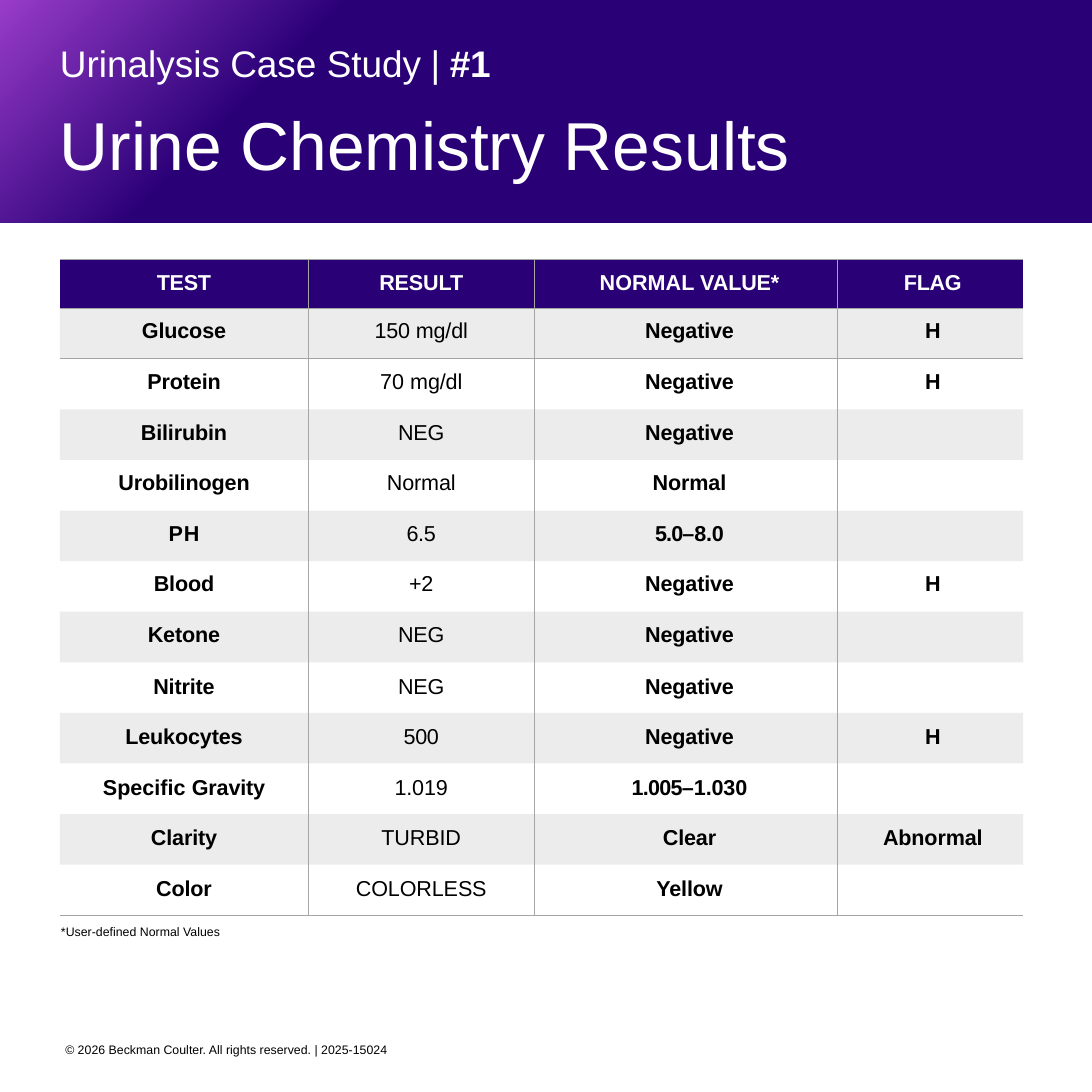
from dataclasses import dataclass

from lxml import etree
from pptx import Presentation
from pptx import util as u
from pptx.dml.color import RGBColor
from pptx.enum import shapes, text
from pptx.oxml.ns import qn

FONT = "Arial"
PURPLE = RGBColor(0x98, 0x3C, 0xC9)
INDIGO = RGBColor(0x29, 0x00, 0x76)
WHITE = RGBColor(0xFF, 0xFF, 0xFF)
BLACK = RGBColor(0, 0, 0)
RULE_GREY = RGBColor(0xA4, 0xA4, 0xA4)
DIVIDER_GREY = RGBColor(0xA6, 0xA6, 0xA6)

SIDE = 9.85
LEFT = 0.54
HEADER_HEIGHT = 0.44
TABLE_HEIGHT = 5.92


@dataclass
class Span:
    text: str
    tracking: float = -0.1
    bold: bool = False


@dataclass
class Column:
    width: float
    indent: float = 0
    bold: bool = True


@dataclass
class Label:
    left: float
    top: float
    width: float
    height: float
    size: float
    color: RGBColor
    spans: list[Span]
    margins: tuple[float, float, float, float] = (0, 0, 0, 0)
    anchor: text.MSO_ANCHOR = text.MSO_ANCHOR.TOP


COLUMNS = [Column(2.24), Column(2.04, bold=False), Column(2.73, 0.07), Column(1.68, 0.05)]

# A cell is a plain string, or a list of spans when its tracking varies
Cell = str | list[Span]
HIGH = [Span("H", 0.1)]
NEG = [Span("NEG", -0.2)]
ROWS: list[list[Cell]] = [
    [[Span("TEST", -0.2)], "RESULT", [Span("NORMAL ", 0), Span("VALUE*")], [Span("FLAG", -0.2)]],
    ["Glucose", [Span("150 ", -0.2), Span("mg/dl")], "Negative", HIGH],
    ["Protein", [Span("70 ", 0), Span("mg/dl")], "Negative", HIGH],
    ["Bilirubin", NEG, "Negative", ""],
    ["Urobilinogen", "Normal", "Normal", ""],
    [[Span("PH", 0.5)], [Span("6.5", -0.2)], [Span("5.0–", -0.6), Span("8.0", -0.2)], ""],
    ["Blood", [Span("+2", -0.2)], "Negative", HIGH],
    ["Ketone", NEG, "Negative", ""],
    ["Nitrite", NEG, "Negative", ""],
    ["Leukocytes", [Span("500", -0.2)], "Negative", HIGH],
    [[Span("Specific ", 0), Span("Gravity")], "1.019", [Span("1.005–", -0.5), Span("1.030")], ""],
    ["Clarity", "TURBID", "Clear", "Abnormal"],
    ["Color", "COLORLESS", "Yellow", ""],
]

LABELS = [
    Label(LEFT, 0.67, 8.7, 1.15, 44, WHITE, [Span("Urine Chemistry Results", 0)],
          (0, 0.1, 0, 0), text.MSO_ANCHOR.MIDDLE),
    Label(LEFT, 0.34, 8.7, 0.4, 24, WHITE,
          [Span("Urinalysis Case Study", 0), Span(" | ", -0.5), Span("#1", -0.2, True)],
          (0, 0.03, 0, 0)),
    Label(LEFT + 0.01, 8.34, 2.58, 0.14, 8, BLACK, [Span("*User-defined Normal Values", 0)]),
    Label(0.49, 9.35, 5.21, 0.24, 8, BLACK,
          [Span("© 2026 Beckman Coulter. All rights reserved. | 2025-15024", 0)],
          (0.1, 0.05, 0.1, 0.05)),
]


def add_span(para, span: Span, size: float, color: RGBColor, bold: bool) -> None:
    run = para.add_run()
    run.text = span.text
    run.font.name = FONT
    run.font.size = u.Pt(size)
    run.font.bold = bold
    run.font.color.rgb = color
    if span.tracking:
        run.font._element.set("spc", str(round(span.tracking * 100)))


def set_margins(target, margins: tuple[float, float, float, float]) -> None:
    left, top, right, bottom = (u.Inches(value) for value in margins)
    target.margin_left, target.margin_top = left, top
    target.margin_right, target.margin_bottom = right, bottom


def add_label(page, label: Label) -> None:
    box = page.shapes.add_textbox(u.Inches(label.left), u.Inches(label.top),
                                  u.Inches(label.width), u.Inches(label.height))
    frame = box.text_frame
    frame.word_wrap = True
    frame.vertical_anchor = label.anchor
    set_margins(frame, label.margins)
    for span in label.spans:
        add_span(frame.paragraphs[0], span, label.size, label.color, span.bold)


def add_band(page) -> None:
    band = page.shapes.add_shape(shapes.MSO_SHAPE.RECTANGLE, 0, 0, u.Inches(SIDE), u.Inches(2.01))
    band.shadow.inherit = False
    band.line.fill.background()
    band.fill.gradient()
    band.fill.gradient_angle = 315
    for stop, color, position in zip(band.fill.gradient_stops, (PURPLE, INDIGO), (0, 0.27)):
        stop.color.rgb = color
        stop.position = position


def fill_cell(cell, row: int) -> None:
    if row > 0 and row % 2 == 0:
        cell.fill.background()
        return
    cell.fill.solid()
    cell.fill.fore_color.rgb = RULE_GREY if row else INDIGO
    if row:
        color = cell._tc.tcPr.find(".//" + qn("a:srgbClr"))
        etree.SubElement(color, qn("a:alpha")).set("val", "20000")


def set_borders(cell, row: int, column: int) -> None:
    divider, rule = (DIVIDER_GREY, 0.5), (RULE_GREY, 1)
    edges = {
        "a:lnL": divider if column > 0 else None,
        "a:lnR": divider if column < len(COLUMNS) - 1 else None,
        "a:lnT": rule if row <= 2 else None,
        "a:lnB": rule if row <= 1 or row == len(ROWS) - 1 else None,
    }
    properties = cell._tc.get_or_add_tcPr()
    for index, (tag, edge) in enumerate(edges.items()):
        line = etree.Element(qn(tag))
        if edge:
            color, width = edge
            line.set("w", str(u.Pt(width)))
            solid = etree.SubElement(line, qn("a:solidFill"))
            etree.SubElement(solid, qn("a:srgbClr")).set("val", str(color))
        else:
            etree.SubElement(line, qn("a:noFill"))
        properties.insert(index, line)


def add_results(page) -> None:
    width = sum(column.width for column in COLUMNS)
    table = page.shapes.add_table(len(ROWS), len(COLUMNS), u.Inches(LEFT), u.Inches(2.34),
                                  u.Inches(width), u.Inches(TABLE_HEIGHT)).table
    table.first_row = table.horz_banding = False
    for index, column in enumerate(COLUMNS):
        table.columns[index].width = u.Inches(column.width)
    body_height = (TABLE_HEIGHT - HEADER_HEIGHT) / (len(ROWS) - 1)
    for row, values in enumerate(ROWS):
        table.rows[row].height = u.Inches(body_height if row else HEADER_HEIGHT)
        for index, (column, value) in enumerate(zip(COLUMNS, values)):
            cell = table.cell(row, index)
            set_margins(cell, (0, 0.1 if row < 8 else 0.11, 0, 0))
            fill_cell(cell, row)
            set_borders(cell, row, index)
            para = cell.text_frame.paragraphs[0]
            para.alignment = text.PP_ALIGN.CENTER
            para._p.get_or_add_pPr().set("marL", str(u.Inches(column.indent)))
            spans = [Span(value)] if isinstance(value, str) else value
            for span in spans:
                if span.text:
                    add_span(para, span, 14, BLACK if row else WHITE, column.bold or row == 0)


def main() -> None:
    deck = Presentation()
    deck.slide_width = deck.slide_height = u.Inches(SIDE)
    page = deck.slides.add_slide(deck.slide_layouts[6])

    # Header band, results table, then all free text
    add_band(page)
    add_results(page)
    for label in LABELS:
        add_label(page, label)
    deck.save("out.pptx")


if __name__ == "__main__":
    main()
